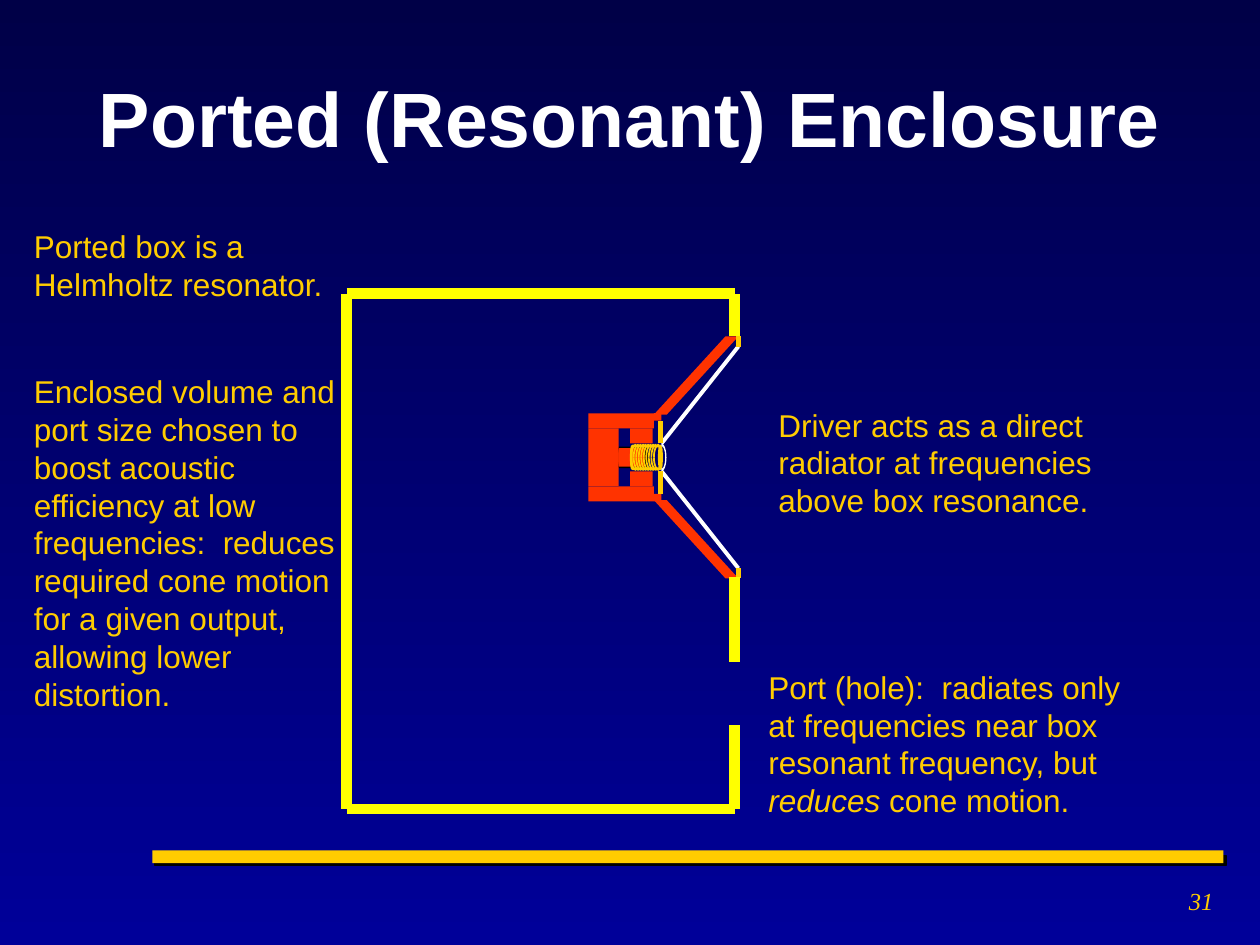
from math import cos, radians, sin

from lxml.etree import SubElement
from pptx import Presentation
from pptx.dml.color import RGBColor
from pptx.enum.shapes import MSO_CONNECTOR, MSO_SHAPE
from pptx.enum.text import MSO_ANCHOR, MSO_AUTO_SIZE, PP_ALIGN
from pptx.oxml.ns import qn
from pptx.util import Inches, Pt

COLORS = {
    "sky_top": "000047",
    "sky_bottom": "000099",
    "gold": "FFCC00",
    "yellow": "FFFF00",
    "red": "FF3300",
    "white": "FFFFFF",
    "black": "000000",
}


def color(name):
    """Return the named palette colour."""
    return RGBColor.from_string(COLORS[name])


def paint(shape, fill=None, line=None, width=0.75):
    """Give a shape a plain fill and outline without a shadow."""
    shape.shadow.inherit = False
    if fill:
        shape.fill.solid()
        shape.fill.fore_color.rgb = color(fill)
    else:
        shape.fill.background()
    if line:
        shape.line.color.rgb = color(line)
        shape.line.width = Pt(width)
    else:
        shape.line.fill.background()
    return shape


def add_part(shapes, kind, left, top, width, height, fill=None, line=None, line_width=0.75):
    """Add a preset shape measured in inches."""
    box = [Inches(length) for length in (left, top, width, height)]
    return paint(shapes.add_shape(kind, *box), fill, line, line_width)


def add_stroke(shapes, start, end, stroke, width):
    """Draw a straight line between two points in inches."""
    ends = [Inches(length) for length in (*start, *end)]
    connector = shapes.add_connector(MSO_CONNECTOR.STRAIGHT, *ends)
    connector.line.color.rgb = color(stroke)
    connector.line.width = Pt(width)
    SubElement(connector._element.spPr, qn("a:effectLst"))


def ellipse_arc(center, radii, start, end, steps=12):
    """Return points along an ellipse between two angles in degrees."""
    angles = [radians(start + (end - start) * step / steps) for step in range(steps + 1)]
    return [
        (Inches(center[0] + radii[0] * cos(a)), Inches(center[1] + radii[1] * sin(a)))
        for a in angles
    ]


def add_outline(shapes, points, close):
    """Build a freeform through the points."""
    builder = shapes.build_freeform(*points[0])
    builder.add_line_segments(points[1:], close=close)
    return builder.convert_to_shape()


def add_text(slide, box, paragraphs, size=18, font="Arial", italic=False,
             align=PP_ALIGN.LEFT, gap=0):
    """Place paragraphs, each a list of (text, italic) runs, in a wrapped box."""
    frame = slide.shapes.add_textbox(*[Inches(length) for length in box]).text_frame
    frame.word_wrap = True
    frame.auto_size = MSO_AUTO_SIZE.NONE if italic else MSO_AUTO_SIZE.SHAPE_TO_FIT_TEXT
    for index, runs in enumerate(paragraphs):
        paragraph = frame.add_paragraph() if index else frame.paragraphs[0]
        paragraph.alignment = align
        if index:
            paragraph.space_before = Pt(gap)
        for words, slanted in runs:
            run = paragraph.add_run()
            run.text = words
            run.font.name = font
            run.font.size = Pt(size)
            run.font.italic = slanted or italic
            run.font.color.rgb = color("gold")


def set_background(slide):
    """Fill the background with a vertical blue gradient."""
    fill = slide.background.fill
    fill.gradient()
    fill.gradient_angle = 270
    for stop, name in zip(fill.gradient_stops, ("sky_top", "sky_bottom")):
        stop.color.rgb = color(name)


def set_title(slide, box, words):
    """Move and format the title placeholder."""
    title = slide.shapes.title
    title.left, title.top, title.width, title.height = [Inches(length) for length in box]
    frame = title.text_frame
    frame.text = words
    frame.vertical_anchor = MSO_ANCHOR.MIDDLE
    paragraph = frame.paragraphs[0]
    paragraph.alignment = PP_ALIGN.CENTER
    font = paragraph.runs[0].font
    font.name, font.size, font.bold = "Arial", Pt(44), True
    font.color.rgb = color("white")


def add_footer(slide, box, number):
    """Add the gold rule with its shade, and the page number below."""
    left, top, width, height = box
    rule = slide.shapes.add_group_shape().shapes
    add_part(rule, MSO_SHAPE.RECTANGLE, left + 0.02, top + 0.04, width, 0.08, "black", "black")
    add_part(rule, MSO_SHAPE.RECTANGLE, left, top, width, 0.1, "gold")
    add_text(slide, (left + width - 1.61, top + 0.23, 1.63, height - 0.23),
             [[(number, False)]], 14, "Times New Roman", True, PP_ALIGN.RIGHT)


def add_coil(shapes, left, axis):
    """Add the magnet core, the voice coil former and its ten turns."""
    core = add_part(shapes, MSO_SHAPE.CAN, left + 0.27, axis - 0.12, 0.16, 0.24, "red", "black")
    former = add_part(shapes, MSO_SHAPE.CAN, left + 0.37, axis - 0.12, 0.18, 0.24,
                      line="gold", line_width=1.5)
    for cylinder, rim in ((core, 0.12), (former, 0.1)):
        cylinder.rotation = 90
        cylinder.adjustments[0] = rim
    for turn in range(10):
        center = (left + 0.38 + 0.02 * turn, axis)
        for start in (90, 180):
            quarter = ellipse_arc(center, (0.04, 0.1), start, start + 90)
            paint(add_outline(shapes, quarter, False), line="gold", width=1)


def add_driver(slide, box):
    """Draw the loudspeaker driver, mirrored about its horizontal axis."""
    left, top, width, height = box
    axis, right = top + height / 2, left + width
    shapes = slide.shapes.add_group_shape().shapes
    add_coil(shapes, left, axis)
    add_part(shapes, MSO_SHAPE.RECTANGLE, left, axis - 0.23, 0.24, 0.46, "red")
    red_parts = [
        (MSO_SHAPE.RECTANGLE, 0.33, 0.18, 0.11, 0.23),
        (MSO_SHAPE.RECTANGLE, 0, 0.52, 0.23, 0.35),
        (MSO_SHAPE.RECTANGLE, 0.52, 0.06, 0.29, 0.35),
        (MSO_SHAPE.PARALLELOGRAM, 0.52, 0.67, 0.34, 0.96),
    ]
    for side in (-1, 1):
        for kind, offset, part_width, inner, outer in red_parts:
            part_top = axis + min(side * inner, side * outer)
            part = add_part(shapes, kind, left + offset, part_top, part_width, outer - inner, "red")
            if kind == MSO_SHAPE.PARALLELOGRAM:
                part.adjustments[0] = 0.915
                if side > 0:
                    part._element.spPr.xfrm.set("flipV", "1")
        for x, inner, end_x, outer, stroke, weight in (
            (left + 0.58, 0.11, right, 0.88, "white", 2.25),
            (left + 0.57, 0.11, left + 0.57, 0.29, "gold", 3),
            (right, 0.88, right, 0.96, "gold", 3),
        ):
            add_stroke(shapes, (x, axis + side * inner), (end_x, axis + side * outer),
                       stroke, weight)
    cap_center = (left + 0.58, axis)
    dust_cap = (ellipse_arc(cap_center, (0.03, 0.09), -90, 90)
                + ellipse_arc(cap_center, (0.04, 0.11), 90, -90))
    paint(add_outline(shapes, dust_cap, True), "white")


def add_enclosure(slide, box):
    """Draw the cabinet walls, open at the driver and at the port."""
    left, top, width, height = box
    right, bottom = left + width, top + height
    walls = [
        ((right, top + 0.34), (right, top)),
        ((right, top + 2.92), (right, top + 2.25)),
        ((left, top), (left, bottom)),
        ((left, top), (right, top)),
        ((left, bottom), (right, bottom)),
        ((right, bottom), (right, bottom - 0.67)),
    ]
    for start, end in walls:
        add_stroke(slide.shapes, start, end, "yellow", 6)


def add_notes(slide):
    """Add the explanations around the enclosure."""
    add_text(slide, (6, 5.25, 3.25, 1.31), [[
        ("Port (hole):  radiates only at frequencies near box resonant frequency, but ", False),
        ("reduces", True),
        (" cone motion.", False),
    ]])
    add_text(slide, (0.17, 1.75, 2.67, 4.01), [
        [("Ported box is a Helmholtz resonator.", False)],
        [("Enclosed volume and port size chosen to boost acoustic efficiency at low "
          "frequencies:  reduces required cone motion for a given output, allowing "
          "lower distortion.", False)],
    ], gap=40)
    add_text(slide, (6.08, 3.17, 3.25, 1), [[
        ("Driver acts as a direct radiator at frequencies above box resonance.", False),
    ]])


def main():
    """Build the slide and save it."""
    deck = Presentation()
    deck.slide_width, deck.slide_height = Inches(10), Inches(7.5)
    slide = deck.slides.add_slide(deck.slide_layouts[5])
    set_background(slide)
    add_footer(slide, (1.21, 6.75, 8.5, 0.75), "31")
    set_title(slide, (0.5, 0.3, 9, 1.25), "Ported (Resonant) Enclosure")
    add_driver(slide, (4.67, 2.67, 1.19, 1.92))
    add_enclosure(slide, (2.75, 2.33, 3.08, 4.09))
    add_notes(slide)
    deck.save("out.pptx")


if __name__ == "__main__":
    main()
